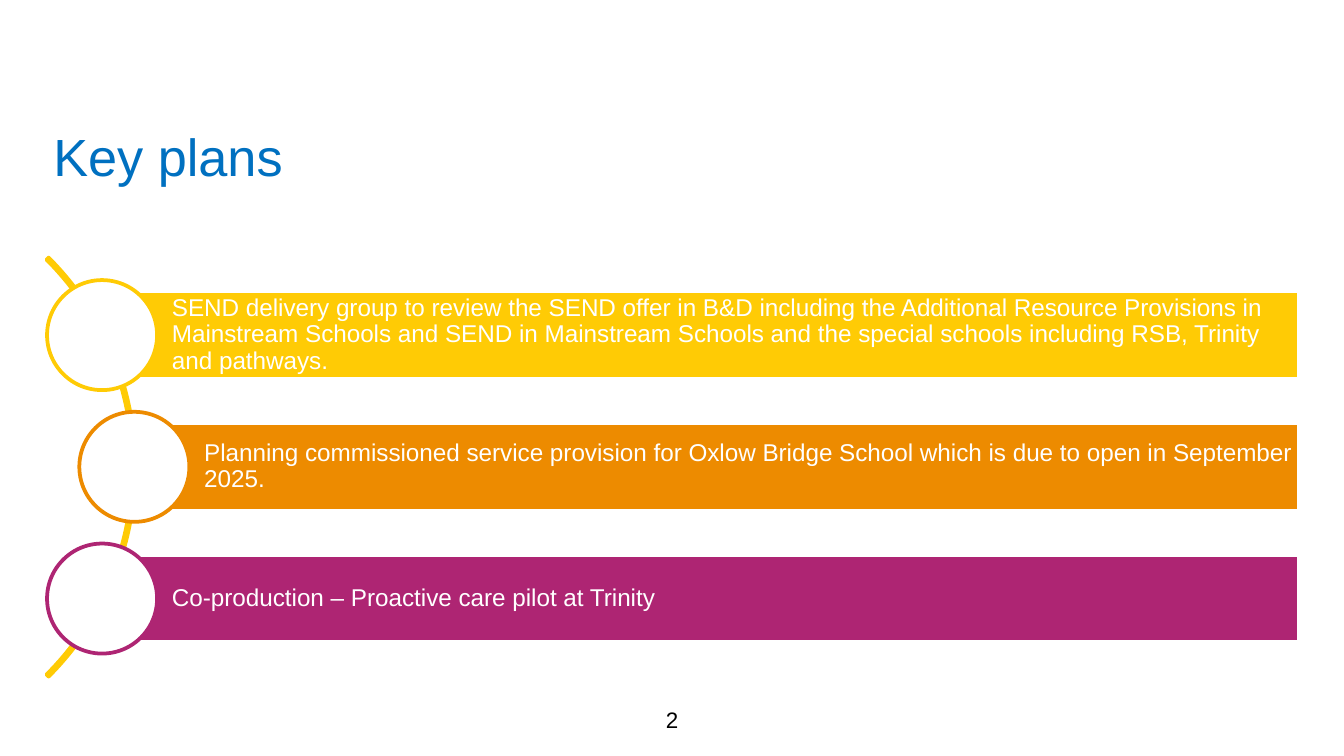
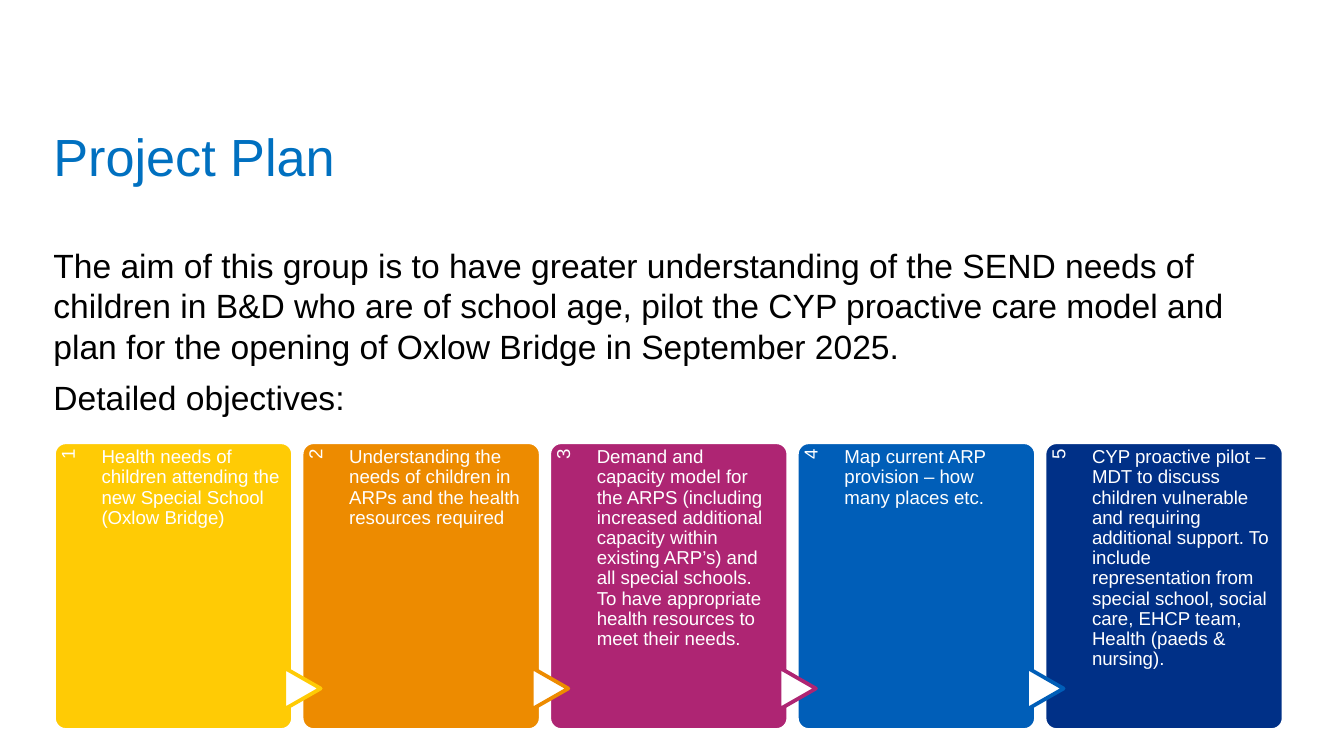
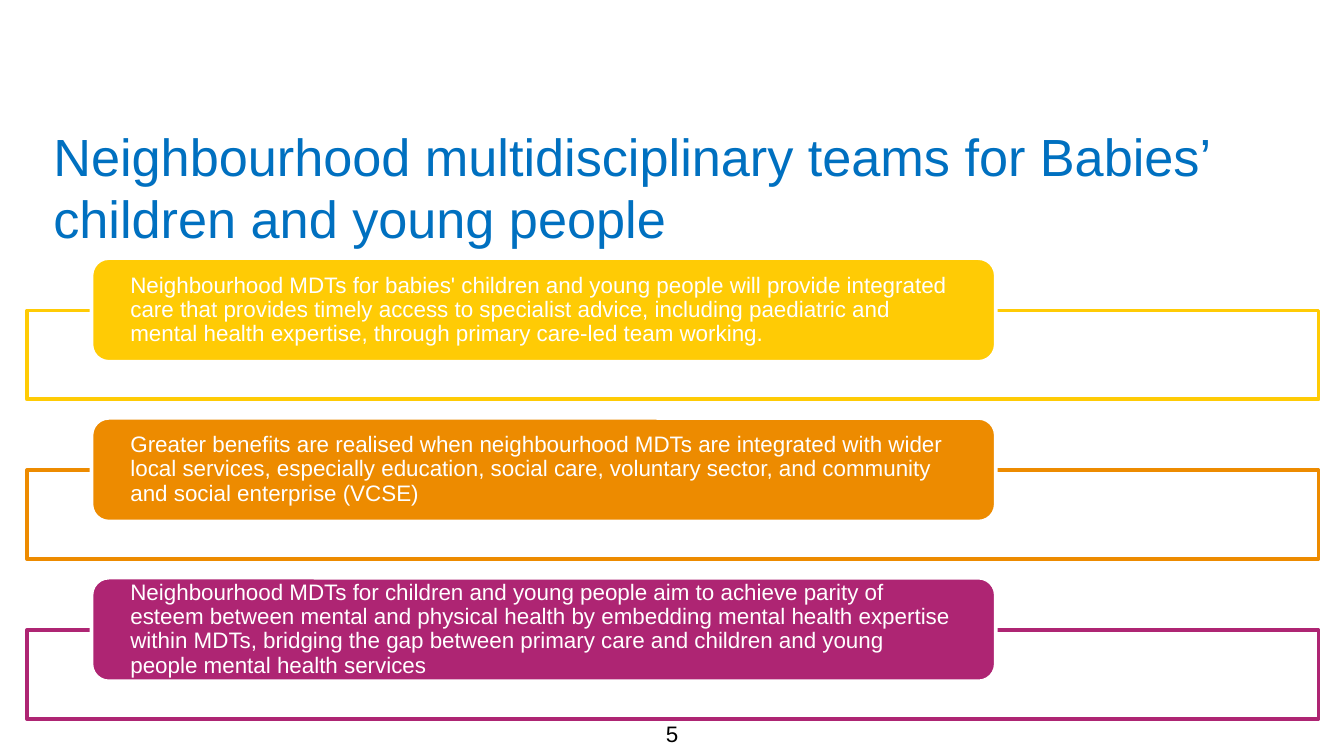
from dataclasses import dataclass
from typing import Optional

from pptx import Presentation
from pptx.dml.color import RGBColor
from pptx.enum.shapes import MSO_SHAPE as SHAPE
from pptx.enum.text import MSO_ANCHOR as ANCHOR, PP_ALIGN as ALIGN
from pptx.util import Cm, Pt

FONT = "Arial"
COLORS = {
    "title": "0070C0",
    "text": "000000",
    "white": "FFFFFF",
    "yellow": "FFCB05",
    "orange": "ED8B00",
    "magenta": "AE2573",
    "blue": "005EB8",
    "navy": "003087",
}
ACCENTS = ["yellow", "orange", "magenta", "blue", "navy"]


@dataclass(frozen=True)
class Box:
    """A frame in centimetres."""
    left: float
    top: float
    width: float
    height: float


@dataclass(frozen=True)
class TextStyle:
    """Size in points; insets (left, top, right, bottom) in centimetres."""
    size: float
    color: str = "white"
    align: ALIGN = ALIGN.LEFT
    anchor: ANCHOR = ANCHOR.TOP
    insets: tuple[float, float, float, float] = (0.25, 0.13, 0.25, 0.13)
    spacing: Optional[float] = None
    before: float = 0


TITLE = TextStyle(28, "title")
BODY = TextStyle(18, "text", before=6)
PAGE_NUMBER = TextStyle(12, "text", ALIGN.CENTER, ANCHOR.MIDDLE)
PLAN = TextStyle(13, anchor=ANCHOR.MIDDLE, insets=(1.32, 0.1, 0.1, 0.1), spacing=0.9)
CARD_NUMBER = TextStyle(10, align=ALIGN.RIGHT, insets=(0, 0.1, 0.13, 0), spacing=0.9)
CARD_TEXT = TextStyle(10, insets=(0, 0.1, 0, 0), spacing=0.9)
TEAM = TextStyle(12, anchor=ANCHOR.MIDDLE, insets=(0.64, 0, 0.64, 0), spacing=0.9)

PLANS = [
    "SEND delivery group to review the SEND offer in B&D including the Additional "
    "Resource Provisions in Mainstream Schools and SEND in Mainstream Schools and the "
    "special schools including RSB, Trinity and pathways.",
    "Planning commissioned service provision for Oxlow Bridge School which is due to "
    "open in September 2025.",
    "Co-production – Proactive care pilot at Trinity",
]
AIM = [
    "The aim of this group is to have greater understanding of the SEND needs of "
    "children in B&D who are of school age, pilot the CYP proactive care model and "
    "plan for the opening of Oxlow Bridge in September 2025.",
    "Detailed objectives:",
]
OBJECTIVES = [
    "Health needs of children attending the new Special School (Oxlow Bridge)",
    "Understanding the needs of children in ARPs and the health resources required",
    "Demand and capacity model for the ARPS (including increased additional capacity "
    "within existing ARP’s) and all special schools. To have appropriate health "
    "resources to meet their needs.",
    "Map current ARP provision – how many places etc.",
    "CYP proactive pilot – MDT to discuss children vulnerable and requiring additional "
    "support. To include representation from special school, social care, EHCP team, "
    "Health (paeds & nursing).",
]
TEAMS = [
    "Neighbourhood MDTs for babies' children and young people will provide integrated "
    "care that provides timely access to specialist advice, including paediatric and "
    "mental health expertise, through primary care-led team working.",
    "Greater benefits are realised when neighbourhood MDTs are integrated with wider "
    "local services, especially education, social care, voluntary sector, and community "
    "and social enterprise (VCSE)",
    "Neighbourhood MDTs for children and young people aim to achieve parity of esteem "
    "between mental and physical health by embedding mental health expertise within "
    "MDTs, bridging the gap between primary care and children and young people mental "
    "health services",
]


def rgb(name: str) -> RGBColor:
    return RGBColor.from_string(COLORS[name])


def place(box: Box) -> tuple[Cm, Cm, Cm, Cm]:
    return Cm(box.left), Cm(box.top), Cm(box.width), Cm(box.height)


def write(sp, paragraphs: list[str], style: TextStyle) -> None:
    tf = sp.text_frame
    tf.word_wrap = True
    tf.vertical_anchor = style.anchor
    tf.margin_left, tf.margin_top, tf.margin_right, tf.margin_bottom = map(Cm, style.insets)
    for i, text in enumerate(paragraphs):
        p = tf.add_paragraph() if i else tf.paragraphs[0]
        p.text = text
        p.alignment = style.align
        if style.spacing:
            p.line_spacing = style.spacing
        if i:
            p.space_before = Pt(style.before)
        p.font.name = FONT
        p.font.size = Pt(style.size)
        p.font.color.rgb = rgb(style.color)


def add_text(slide, box: Box, paragraphs: list[str], style: TextStyle, rotation: float = 0) -> None:
    sp = slide.shapes.add_textbox(*place(box))
    sp.rotation = rotation
    write(sp, paragraphs, style)


def add_figure(slide, kind: SHAPE, box: Box, fill: Optional[str], line: str = "white",
               adjustments: tuple[float, ...] = (), rotation: float = 0):
    """Add a preset shape with a 2 pt outline; fill None leaves it open."""
    sp = slide.shapes.add_shape(kind, *place(box))
    sp.shadow.inherit = False
    sp.rotation = rotation
    for i, value in enumerate(adjustments):
        sp.adjustments[i] = value
    if fill:
        sp.fill.solid()
        sp.fill.fore_color.rgb = rgb(fill)
    else:
        sp.fill.background()
    sp.line.color.rgb = rgb(line)
    sp.line.width = Pt(2)
    return sp


def add_slide(prs, title: str, title_width: float = 18.67):
    slide = prs.slides.add_slide(prs.slide_layouts[6])
    add_text(slide, Box(0.76, 2.21, title_width, 1.55), [title], TITLE)
    return slide


def add_page_number(slide, number: int, top: float) -> None:
    add_text(slide, Box(9.74, top, 5.92, 0.76), [str(number)], PAGE_NUMBER)


def build_key_plans(prs) -> None:
    slide = add_slide(prs, "Key plans")
    add_figure(slide, SHAPE.BLOCK_ARC, Box(-8.64, 3.23, 11.2, 11.2), None, "yellow",
               (189, 27, 0.005))
    right, height, diameter = 24.54, 1.65, 2.08
    for i, (text, color) in enumerate(zip(PLANS, ACCENTS)):
        left = 2.54 if i % 2 else 1.93
        top = 5.51 + i * 2.49
        bar = add_figure(slide, SHAPE.RECTANGLE, Box(left, top, right - left, height), color)
        write(bar, [text], PLAN)
        circle = Box(left - diameter / 2, top + (height - diameter) / 2, diameter, diameter)
        add_figure(slide, SHAPE.OVAL, circle, "white", color)
    add_page_number(slide, 2, 13.23)


def build_project_plan(prs) -> None:
    slide = add_slide(prs, "Project Plan")
    add_text(slide, Box(0.76, 4.5, 23.88, 8.31), AIM, BODY)
    top, height = 8.36, 5.44
    for i, (text, color) in enumerate(zip(OBJECTIVES, ACCENTS)):
        left = 1.02 + i * 4.68
        add_figure(slide, SHAPE.ROUNDED_RECTANGLE, Box(left, top, 4.52, height), color,
                   adjustments=(0.05,))
        add_text(slide, Box(left - 1.78, 10.13, 4.45, 0.91), [str(i + 1)], CARD_NUMBER, 270)
        if i:
            add_figure(slide, SHAPE.FLOWCHART_EXTRACT, Box(left - 0.38, 12.67, 0.79, 0.69),
                       "white", ACCENTS[i - 1], rotation=90)
        add_text(slide, Box(left + 0.9, top, 3.38, height), [text], CARD_TEXT)


def build_neighbourhood_teams(prs) -> None:
    slide = add_slide(prs, "Neighbourhood multidisciplinary teams for Babies’ "
                           "children and young people", 23.88)
    add_page_number(slide, 5, 13.49)
    for i, (text, color) in enumerate(zip(TEAMS, ACCENTS)):
        top = 4.88 + i * 3.02
        add_figure(slide, SHAPE.RECTANGLE, Box(0.51, top + 0.99, 24.41, 1.68), "white", color)
        label = add_figure(slide, SHAPE.ROUNDED_RECTANGLE, Box(1.73, top, 17.09, 1.96), color)
        write(label, [text], TEAM)


def main() -> None:
    prs = Presentation()
    prs.slide_width, prs.slide_height = Cm(25.4), Cm(14.29)
    build_key_plans(prs)
    build_project_plan(prs)
    build_neighbourhood_teams(prs)
    prs.save("out.pptx")


if __name__ == "__main__":
    main()
